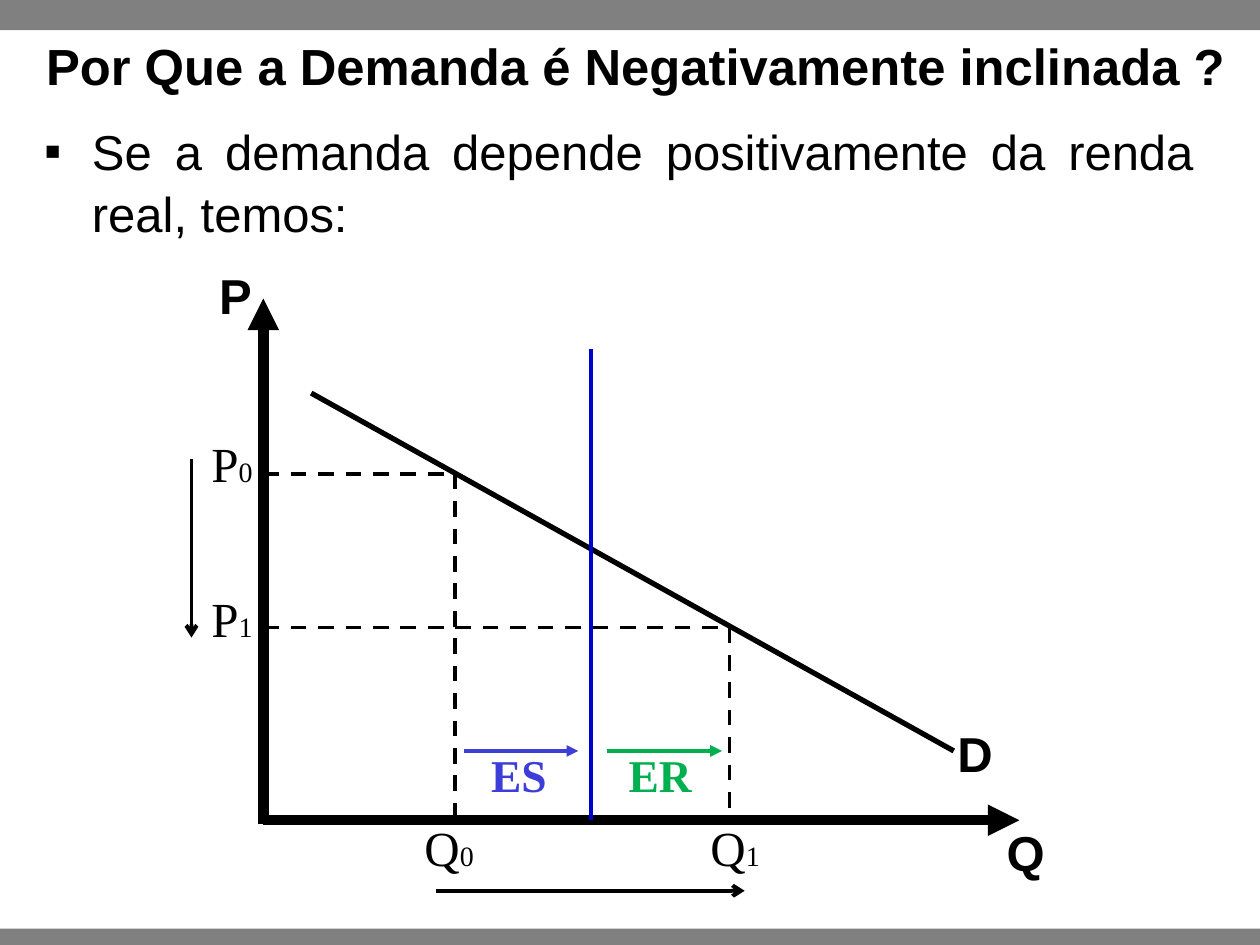
from lxml import etree
from pptx import Presentation
from pptx.dml.color import RGBColor
from pptx.enum.dml import MSO_LINE
from pptx.enum.shapes import MSO_CONNECTOR, MSO_SHAPE
from pptx.enum.text import MSO_ANCHOR, MSO_AUTO_SIZE, PP_ALIGN
from pptx.oxml.ns import qn
from pptx.util import Inches, Pt

COLORS = {
    "black": "000000",
    "gray": "808080",
    "divider": "0000CC",
    "substitution": "3D3DD7",
    "income": "00B050",
}
SANS, SERIF = "Arial", "Times New Roman"


class DemandSlide:
    def __init__(self, deck):
        self.slide = deck.slides.add_slide(deck.slide_layouts[1])
        self.shapes = self.slide.shapes

    def color(self, name):
        return RGBColor.from_string(COLORS[name])

    def style(self, font, size, face=SANS, color="black", bold=False):
        font.name, font.size, font.bold = face, Pt(size), bold
        font.color.rgb = self.color(color)

    def place(self, element, left, top, width, height):
        element.left, element.top = Inches(left), Inches(top)
        element.width, element.height = Inches(width), Inches(height)

    def band(self, top, height):
        bar = self.shapes.add_shape(
            MSO_SHAPE.RECTANGLE, 0, Inches(top), Inches(10), Inches(height))
        bar.shadow.inherit = False
        bar.fill.solid()
        bar.fill.fore_color.rgb = self.color("gray")
        bar.line.fill.background()

    def title(self, wording):
        heading = self.shapes.title
        self.place(heading, 0.05, -0.05, 10, 0.86)
        frame = heading.text_frame
        frame.text = wording
        frame.auto_size = MSO_AUTO_SIZE.NONE
        frame.vertical_anchor = MSO_ANCHOR.BOTTOM
        paragraph = frame.paragraphs[0]
        paragraph.alignment = PP_ALIGN.CENTER
        self.style(paragraph.font, 29, bold=True)

    def bullet(self, wording):
        body = self.slide.placeholders[1]
        self.place(body, 0.25, 0.89, 9.32, 1.04)
        frame = body.text_frame
        frame.text = wording
        frame.auto_size = MSO_AUTO_SIZE.NONE
        paragraph = frame.paragraphs[0]
        paragraph.alignment = PP_ALIGN.JUSTIFY
        paragraph.space_before = Pt(0)
        paragraph.line_spacing = 1.05
        self.style(paragraph.font, 28)
        properties = paragraph._p.get_or_add_pPr()
        properties.set("marL", str(Inches(0.38)))
        properties.set("indent", str(Inches(-0.38)))
        mark = etree.Element(qn("a:buChar"), char="▪")
        properties.find(qn("a:defRPr")).addprevious(mark)

    def line(self, start, end, color="black", weight=2.25, dashed=False, head=None):
        stroke = self.shapes.add_connector(
            MSO_CONNECTOR.STRAIGHT, *map(Inches, (*start, *end)))
        stroke.line.color.rgb = self.color(color)
        stroke.line.width = Pt(weight)
        if dashed:
            stroke.line.dash_style = MSO_LINE.DASH
        if head:
            etree.SubElement(stroke.line._get_or_add_ln(), qn("a:tailEnd"), type=head)
        etree.SubElement(stroke._element.spPr, qn("a:effectLst"))

    def label(self, wording, left, top, width=0.72, index="", size=28, **look):
        box = self.shapes.add_textbox(*map(Inches, (left, top, width, 0.57)))
        box.text_frame.word_wrap = True
        paragraph = box.text_frame.paragraphs[0]
        paragraph.add_run().text = wording
        self.style(paragraph.font, size, **look)
        if index:
            subscript = paragraph.add_run()
            subscript.text = index
            subscript.font.size = Pt(16)


def main():
    deck = Presentation()
    deck.slide_width, deck.slide_height = Inches(10), Inches(7.5)
    page = DemandSlide(deck)

    page.band(0, 0.24)
    page.band(7.37, 0.13)
    page.title("Por Que a Demanda é Negativamente inclinada ?")
    page.bullet("Se a demanda depende positivamente da renda real, temos:")

    axis_x, axis_y = 2.09, 6.51
    page.line((axis_x, 6.54), (axis_x, 2.37), weight=6, head="triangle")
    page.line((axis_x, axis_y), (8.09, axis_y), weight=6, head="triangle")
    page.line((2.47, 3.12), (7.57, 5.96), weight=3)
    for name, left, top, width in (
            ("P", 1.64, 2.06, 0.59), ("Q", 7.89, 6.48, 0.59), ("D", 7.5, 5.69, 0.37)):
        page.label(name, left, top, width, bold=True)

    equilibria = (("0", 3.61, 3.76, 3.39, 3.27), ("1", 5.79, 4.98, 4.62, 5.54))
    for index, quantity, price, price_top, quantity_left in equilibria:
        page.line((axis_x, price), (quantity, price), dashed=True)
        page.line((quantity, price), (quantity, axis_y), dashed=True)
        page.label("P", 1.58, price_top, index=index, face=SERIF)
        page.label("Q", quantity_left, 6.44, index=index, face=SERIF)

    effects = (("ES", "substitution", 3.68, 3.8), ("ER", "income", 4.82, 4.89))
    for name, color, start, left in effects:
        page.line((start, 5.96), (start + 0.91, 5.96), color, head="triangle")
        page.label(name, left, 5.88, 1, size=26, face=SERIF, color=color, bold=True)

    page.line((1.52, 3.64), (1.52, 5.06), head="arrow")
    page.line((3.46, 7.07), (5.91, 7.07), head="arrow")
    page.line((4.69, 2.77), (4.69, axis_y), "divider")

    deck.save("out.pptx")


if __name__ == "__main__":
    main()
